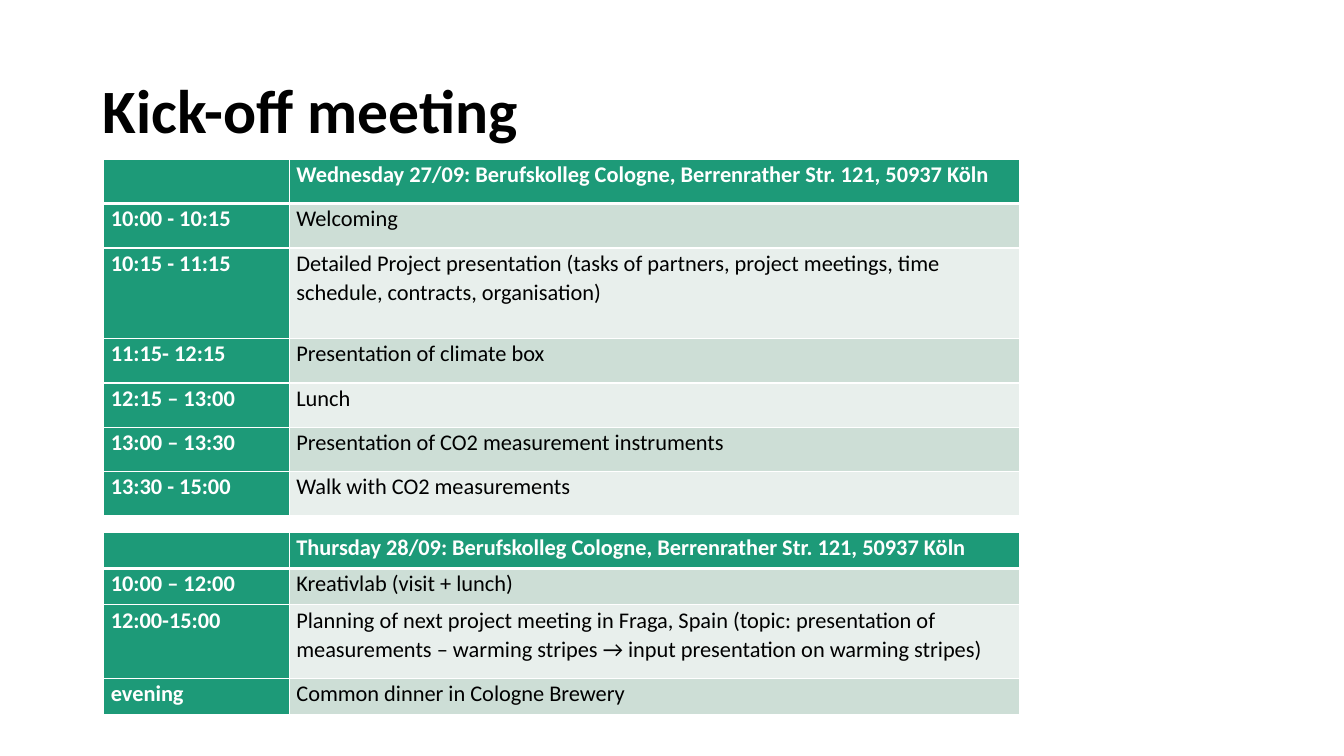
import pptx
import pptx.util
import pptx.dml.color
import pptx.enum.text
import pptx.oxml.ns
from dataclasses import dataclass
from lxml import etree

PX = 9144  # EMU per px, 100 px to the inch


@dataclass(frozen=True)
class Theme:
    font: str = "Calibri"
    title_size: int = 44
    body_size: int = 16
    black: str = "000000"
    white: str = "FFFFFF"
    green: str = "1D9A78"
    bands: tuple = ("CDDED6", "E8EFEC")
    rule: int = 1
    header_rule: int = 3


THEME = Theme()
TIME_COLUMN = 184

WEDNESDAY = [
    (44, "", "Wednesday 27/09: Berufskolleg Cologne, Berrenrather Str. 121, 50937 Köln"),
    (44, "10:00 - 10:15", "Welcoming"),
    (90, "10:15 - 11:15", "Detailed Project presentation (tasks of partners, project meetings, "
                          "time schedule, contracts, organisation)"),
    (44, "11:15- 12:15", "Presentation of climate box"),
    (44, "12:15 – 13:00", "Lunch"),
    (44, "13:00 – 13:30", "Presentation of CO2 measurement instruments"),
    (44, "13:30 - 15:00", "Walk with CO2 measurements"),
]
THURSDAY = [
    (36, "", "Thursday 28/09: Berufskolleg Cologne, Berrenrather Str. 121, 50937 Köln"),
    (36, "10:00 – 12:00", "Kreativlab (visit + lunch)"),
    (73, "12:00-15:00", "Planning of next project meeting in Fraga, Spain (topic: presentation of "
                        "measurements – warming stripes → input presentation on warming stripes)"),
    (36, "evening", "Common dinner in Cologne Brewery"),
]


def px(n):
    return pptx.util.Emu(n * PX)


def rgb(color):
    return pptx.dml.color.RGBColor.from_string(color)


def write(tf, text, size=THEME.body_size, color=THEME.black, bold=False, spacing=1.07):
    p = tf.paragraphs[0]
    p.line_spacing = spacing
    if not text:
        return
    r = p.add_run()
    r.text = text
    r.font.name = THEME.font
    r.font.size = pptx.util.Pt(size)
    r.font.bold = bold
    r.font.color.rgb = rgb(color)


def set_borders(cell, **widths):
    """Draw white cell borders; the sides are L, R, T and B."""
    qn = pptx.oxml.ns.qn
    tcPr = cell._tc.get_or_add_tcPr()
    for side in "LRTB":
        width = pptx.util.Pt(widths.get(side, THEME.rule))
        ln = etree.SubElement(tcPr, qn("a:ln" + side), w=str(int(width)))
        fill = etree.SubElement(ln, qn("a:solidFill"))
        etree.SubElement(fill, qn("a:srgbClr"), val=THEME.white)


def add_title(s, text, x, y, w, h):
    sp = s.shapes.title
    sp.left, sp.top, sp.width, sp.height = map(px, (x, y, w, h))
    tf = sp.text_frame
    tf.word_wrap = True
    tf.vertical_anchor = pptx.enum.text.MSO_ANCHOR.MIDDLE
    write(tf, text, size=THEME.title_size, bold=True, spacing=0.9)
    tf.paragraphs[0].alignment = pptx.enum.text.PP_ALIGN.LEFT


def add_agenda(s, rows, x, y, w):
    height = sum(row[0] for row in rows)
    table = s.shapes.add_table(len(rows), 2, px(x), px(y), px(w), px(height)).table
    table.columns[0].width = px(TIME_COLUMN)
    table.columns[1].width = px(w - TIME_COLUMN)
    for i, (row_height, *texts) in enumerate(rows):
        table.rows[i].height = px(row_height)
        for j, text in enumerate(texts):
            cell = table.cell(i, j)
            cell.margin_left = cell.margin_right = px(7)
            cell.margin_top = cell.margin_bottom = 0
            # A thick rule parts the header from the entries
            set_borders(cell, T=THEME.header_rule if i == 1 else THEME.rule,
                        B=THEME.header_rule if i == 0 else THEME.rule)
            heading = i == 0 or j == 0
            cell.fill.solid()
            cell.fill.fore_color.rgb = rgb(THEME.green if heading else THEME.bands[(i - 1) % 2])
            write(cell.text_frame, text, bold=heading,
                  color=THEME.white if heading else THEME.black)


def main():
    prs = pptx.Presentation()
    prs.slide_width, prs.slide_height = px(1333), px(750)
    s = prs.slides.add_slide(prs.slide_layouts[5])

    # Title
    add_title(s, "Kick-off meeting", 92, 40, 1150, 145)

    # One agenda per day
    for rows, top in ((WEDNESDAY, 158), (THURSDAY, 528)):
        add_agenda(s, rows, 103, top, 908)

    prs.save("out.pptx")


if __name__ == "__main__":
    main()
